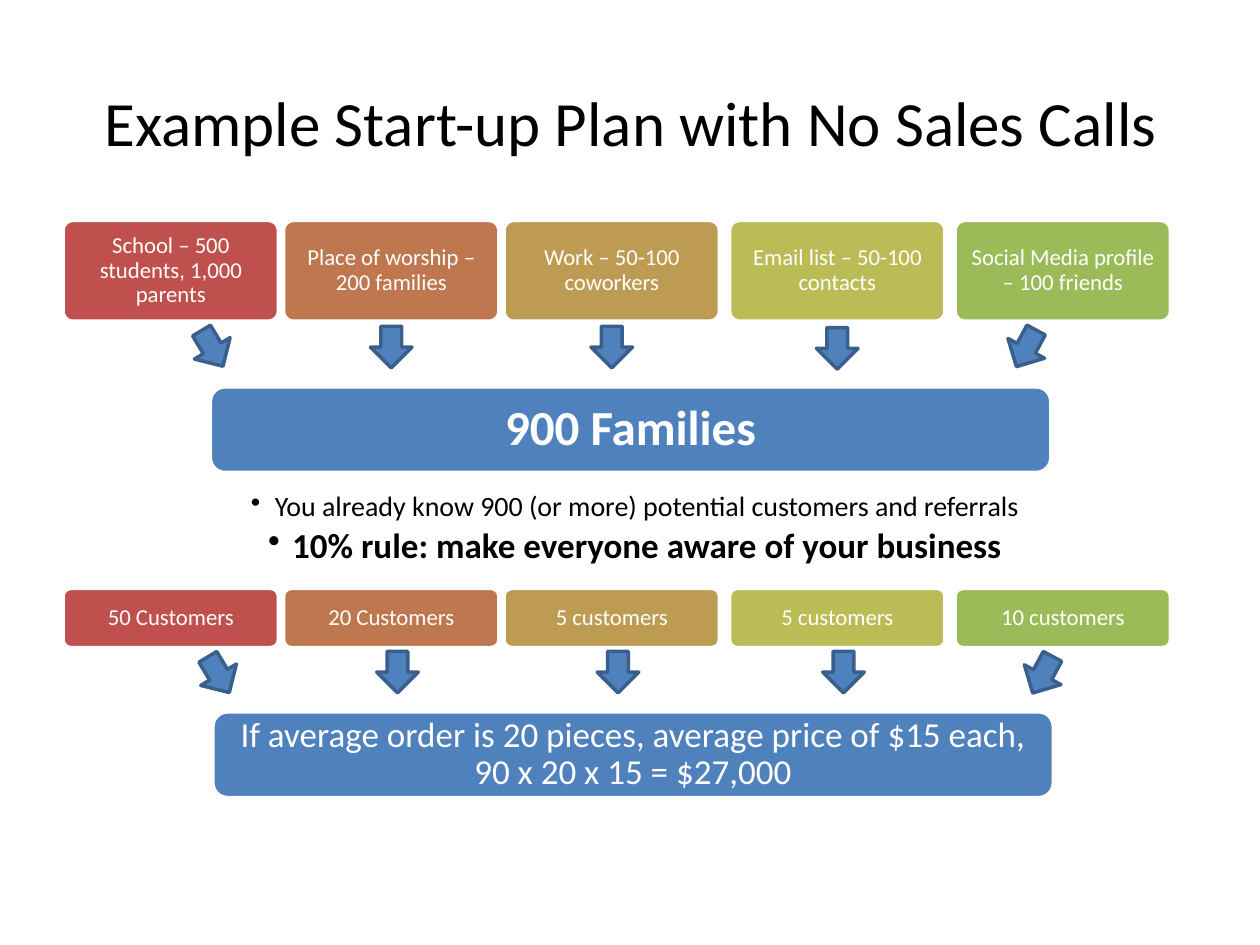
import pptx
import pptx.dml.color
import pptx.enum.shapes
import pptx.enum.text
import pptx.oxml
import pptx.oxml.ns
import pptx.util

Inches = pptx.util.Inches
Pt = pptx.util.Pt
Kind = pptx.enum.shapes.MSO_SHAPE
HUES = {
    "red": "C0504D", "rust": "BF7750", "tan": "BD9B53", "lime": "BCBC56",
    "green": "9BBB59", "blue": "4F81BD", "navy": "3A5F8C",
    "white": "FFFFFF", "black": "000000",
}


class Page:
    """Holds the style and the current slide, and draws each kind of element."""

    font = "Calibri"
    frame = {"word_wrap": True, "vertical_anchor": pptx.enum.text.MSO_ANCHOR.MIDDLE}
    para = {"alignment": pptx.enum.text.PP_ALIGN.CENTER}
    tight = {"line_spacing": 0.9}

    def __init__(self, slide):
        self.slide = slide

    def hue(self, name):
        return pptx.dml.color.RGBColor.from_string(HUES[name])

    def apply(self, item, values):
        for key, value in values.items():
            setattr(item, key, value)

    def label(self, para, text, size, hue, bold=False, look=None):
        para.text = text
        self.apply(para, {**self.para, **(look or {})})
        self.apply(para.font, {"name": self.font, "size": Pt(size), "bold": bold})
        para.font.color.rgb = self.hue(hue)

    def pad(self, frame, left, top, right, base):
        sides = {"left": left, "top": top, "right": right, "bottom": base}
        self.apply(frame, {f"margin_{side}": Inches(gap) for side, gap in sides.items()})

    def shape(self, kind, area, fill, line):
        item = self.slide.shapes.add_shape(kind, *map(Inches, area))
        item.shadow.inherit = False
        item.fill.solid()
        item.fill.fore_color.rgb = self.hue(fill)
        item.line.color.rgb = self.hue(line)
        item.line.width = Pt(2)
        return item

    def box(self, area, fill, text, size, round, gap, bold=False):
        item = self.shape(Kind.ROUNDED_RECTANGLE, area, fill, "white")
        item.adjustments[0] = round
        frame = item.text_frame
        self.apply(frame, self.frame)
        self.pad(frame, gap, gap, gap, gap)
        self.label(frame.paragraphs[0], text, size, "white", bold, self.tight)

    def arrow(self, left, top, turn):
        item = self.shape(Kind.DOWN_ARROW, (left, top, 0.33, 0.33), "blue", "navy")
        item.rotation = turn

    def title(self, area, text):
        frame = self.slide.shapes.add_textbox(*map(Inches, area)).text_frame
        self.apply(frame, self.frame)
        self.label(frame.paragraphs[0], text, 36, "black")

    def bullets(self, area, lines):
        frame = self.slide.shapes.add_textbox(*map(Inches, area)).text_frame
        frame.word_wrap = True
        self.pad(frame, 0.21, 0.03, 0.14, 0.03)
        for num, (text, size, bold) in enumerate(lines):
            para = frame.add_paragraph() if num else frame.paragraphs[0]
            props = para._p.get_or_add_pPr()
            props.set("marL", str(Inches(0.19)))
            props.set("indent", str(Inches(-0.19)))
            mark = pptx.oxml.parse_xml(
                f'<a:buChar {pptx.oxml.ns.nsdecls("a")} char="•"/>')
            props.append(mark)
            look = {**self.tight, "space_after": Pt(size * 0.2)}
            self.label(para, text, size, "black", bold, look)


def main():
    deck = pptx.Presentation()
    deck.slide_width, deck.slide_height = Inches(10), Inches(7.5)
    page = Page(deck.slides.add_slide(deck.slide_layouts[6]))
    page.title((0.42, 0.17, 9.17, 1.58), "Example Start-up Plan with No Sales Calls")

    cols = [(0.5, "red"), (2.25, "rust"), (4, "tan"), (5.79, "lime"), (7.58, "green")]
    groups = ["School – 500 students, 1,000 parents", "Place of worship – 200 families",
              "Work – 50-100 coworkers", "Email list – 50-100 contacts",
              "Social Media profile – 100 friends"]
    buyers = ["50 Customers", "20 Customers", "5 customers", "5 customers",
              "10 customers"]
    for top, high, round, texts in [(1.75, 0.8, 0.1, groups), (4.67, 0.47, 0.13, buyers)]:
        for (left, hue), text in zip(cols, texts):
            page.box((left, top, 1.71, high), hue, text, 13, round, 0.06)

    page.box((1.67, 3.07, 6.67, 0.68), "blue", "900 Families", 28, 0.17, 0.11, True)
    page.bullets((1.67, 3.88, 6.67, 0.72), [
        ("You already know 900 (or more) potential customers and referrals", 16, False),
        ("10% rule: make everyone aware of your business", 20, True),
    ])
    page.box((1.69, 5.65, 6.67, 0.68), "blue",
             "If average order is 20 pieces, average price of $15 each, "
             "90 x 20 x 15 = $27,000", 20, 0.17, 0.11)

    turns = [329, 0, 0, 0, 28.3]
    rows = [
        ([1.52, 2.94, 4.69, 6.48, 7.98], [2.6, 2.59, 2.59, 2.6, 2.6]),
        ([1.57, 2.99, 4.74, 6.53, 8.11], [5.19, 5.17, 5.17, 5.17, 5.19]),
    ]
    for lefts, tops in rows:
        for left, top, turn in zip(lefts, tops, turns):
            page.arrow(left, top, turn)
    deck.save("out.pptx")


if __name__ == "__main__":
    main()
